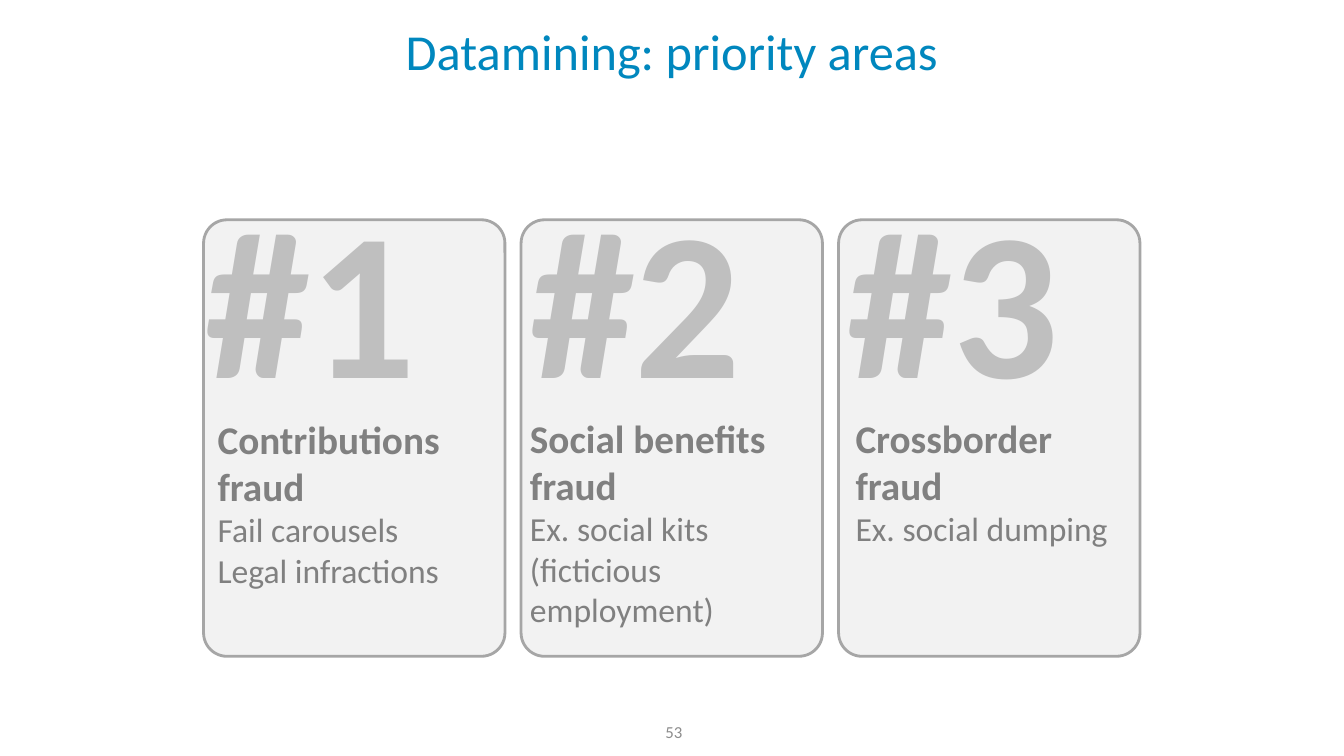
from pptx import Presentation
from pptx.dml.color import RGBColor
from pptx.enum.shapes import MSO_SHAPE as Shape
from pptx.enum.text import MSO_ANCHOR as Anchor, PP_ALIGN as Align
from pptx.util import Pt

FONT = "Calibri"
CARD_TOP, CARD_WIDTH, CARD_HEIGHT = 157, 215.3, 311.8
FIRST_LEFT, CARD_STEP = 145.4, 226.8

# Number, heading, examples, then left offsets of number and body, body top offset
AREAS = [
    ("#1", "Contributions fraud", ["Fail carousels", "Legal infractions"], -5.8, 2.9, 136),
    ("#2", "Social benefits fraud", ["Ex. social kits", "(ficticious employment)"], -0.7, -0.7, 135.3),
    ("#3", "Crossborder fraud", ["Ex. social dumping"], -0.7, 5, 135.3),
]


def color(hex_code):
    return RGBColor.from_string(hex_code)


def add_text(slide, box, lines, hex_code, align=Align.LEFT, anchor=Anchor.TOP, wrap=True):
    """Place lines of (text, size, bold), one paragraph each."""
    frame = slide.shapes.add_textbox(*(Pt(v) for v in box)).text_frame
    frame.word_wrap = wrap
    frame.vertical_anchor = anchor
    frame.text = "\n".join(text for text, _, _ in lines)
    for paragraph, (_, size, bold) in zip(frame.paragraphs, lines):
        paragraph.alignment = align
        font = paragraph.runs[0].font
        font.name, font.size, font.bold = FONT, Pt(size), bold
        font.color.rgb = color(hex_code)


def add_title(slide, box):
    add_text(slide, box, [("Datamining: priority areas", 36, False)], "0087BE",
             Align.CENTER, Anchor.MIDDLE)


def add_panel(slide, box):
    panel = slide.shapes.add_shape(Shape.ROUNDED_RECTANGLE, *(Pt(v) for v in box))
    panel.adjustments[0] = 0.078
    panel.shadow.inherit = False
    panel.fill.solid()
    panel.fill.fore_color.rgb = color("F2F2F2")
    panel.line.color.rgb = color("A6A6A6")
    panel.line.width = Pt(2)


def add_area(slide, box, area):
    left, top, width, height = box
    number, heading, examples, number_shift, body_shift, body_drop = area
    add_panel(slide, box)
    # Large number, rising above the panel
    add_text(slide, (left + number_shift, top - 40.3, 167, 189.4),
             [(number, 150, True)], "BFBFBF", wrap=False)
    # Heading and examples, ending at the panel's right edge
    lines = [(heading, 28, True)] + [(example, 24, False) for example in examples]
    add_text(slide, (left + body_shift, top + body_drop, width - body_shift, height - body_drop),
             lines, "808080")


def add_page_number(slide, box):
    add_text(slide, box, [("53", 12, False)], "8C8C8C", Align.CENTER, Anchor.MIDDLE)


def main():
    deck = Presentation()
    deck.slide_width, deck.slide_height = Pt(960), Pt(540)
    slide = deck.slides.add_slide(deck.slide_layouts[6])
    add_title(slide, (15, 0, 930, 71.3))
    for index, area in enumerate(AREAS):
        left = FIRST_LEFT + index * CARD_STEP
        add_area(slide, (left, CARD_TOP, CARD_WIDTH, CARD_HEIGHT), area)
    add_page_number(slide, (369.4, 508.3, 224, 28.8))
    deck.save("out.pptx")


if __name__ == "__main__":
    main()
